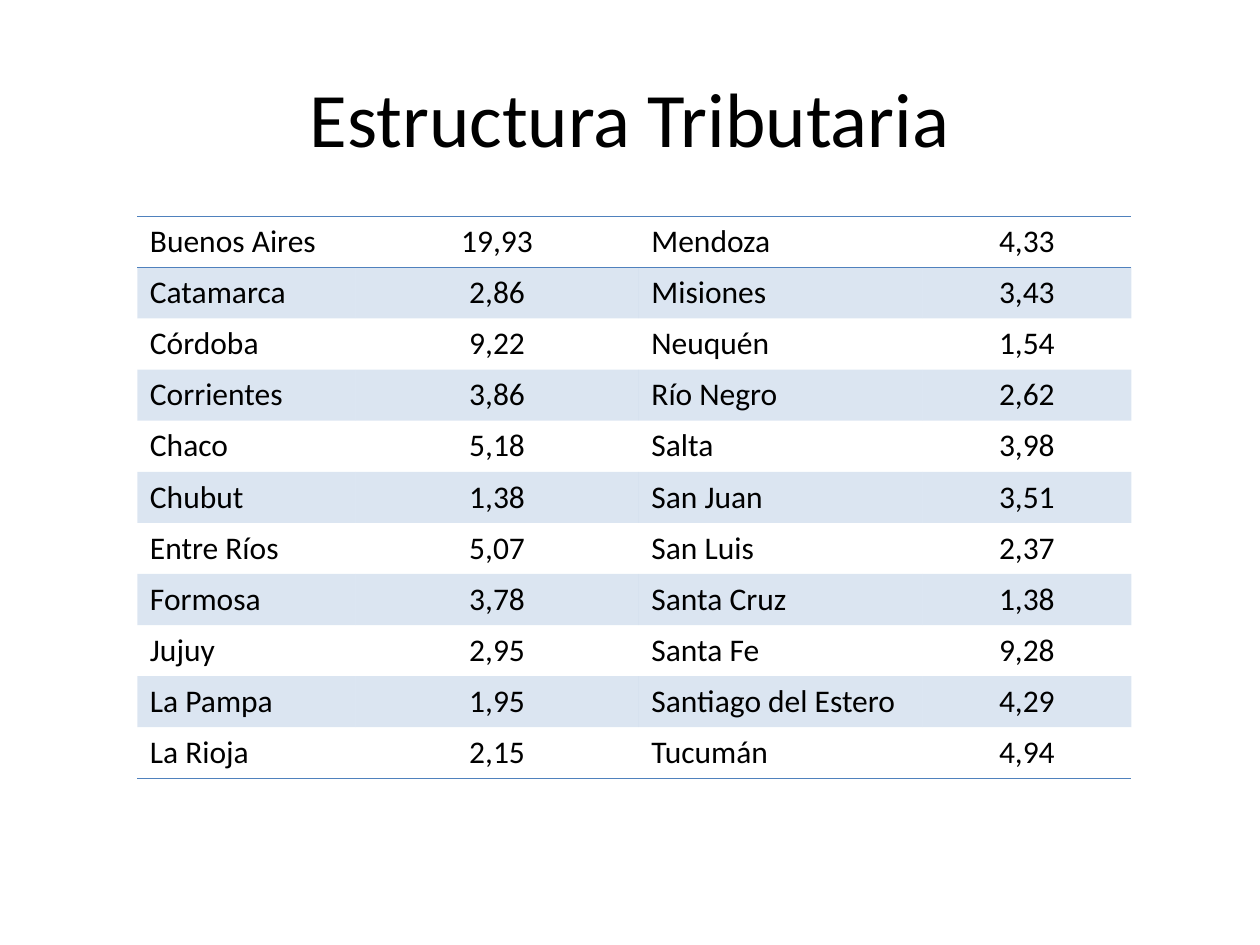
from typing import NamedTuple

from lxml import etree
from pptx import Presentation, util as u
from pptx.dml import color
from pptx.enum import text as t
from pptx.oxml import ns

BLACK = color.RGBColor(0x00, 0x00, 0x00)
BLUE = color.RGBColor(0x4F, 0x81, 0xBD)
FONT = "Calibri"
NO_STYLE = "{2D5ABB26-0587-4C30-8999-92F81FD0307C}"
BAND_OPACITY = 20
COLUMN_WIDTHS = (124.56, 162, 162, 119.52)
ROW_HEIGHT = 29.2
TABLE_LEFT, TABLE_TOP = 78.48, 123.6


class Province(NamedTuple):
    name: str
    share: str


LEFT_PROVINCES = (
    Province("Buenos Aires", "19,93"),
    Province("Catamarca", "2,86"),
    Province("Córdoba", "9,22"),
    Province("Corrientes", "3,86"),
    Province("Chaco", "5,18"),
    Province("Chubut", "1,38"),
    Province("Entre Ríos", "5,07"),
    Province("Formosa", "3,78"),
    Province("Jujuy", "2,95"),
    Province("La Pampa", "1,95"),
    Province("La Rioja", "2,15"),
)
RIGHT_PROVINCES = (
    Province("Mendoza", "4,33"),
    Province("Misiones", "3,43"),
    Province("Neuquén", "1,54"),
    Province("Río Negro", "2,62"),
    Province("Salta", "3,98"),
    Province("San Juan", "3,51"),
    Province("San Luis", "2,37"),
    Province("Santa Cruz", "1,38"),
    Province("Santa Fe", "9,28"),
    Province("Santiago del Estero", "4,29"),
    Province("Tucumán", "4,94"),
)


def write_text(text_frame, content: str, *, size: float,
               align: t.PP_ALIGN = t.PP_ALIGN.LEFT) -> None:
    paragraph = text_frame.paragraphs[0]
    paragraph.alignment = align
    run = paragraph.add_run()
    run.text = content
    run.font.name = FONT
    run.font.size = u.Pt(size)
    run.font.color.rgb = BLACK


def add_border(cell, side: str) -> None:
    properties = cell._tc.get_or_add_tcPr()
    line = etree.SubElement(properties, ns.qn(f"a:{side}"), w=str(u.Pt(1)))
    fill = etree.SubElement(line, ns.qn("a:solidFill"))
    etree.SubElement(fill, ns.qn("a:srgbClr"), val=str(BLUE))


def fill_band(cell) -> None:
    cell.fill.solid()
    cell.fill.fore_color.rgb = BLUE
    band_color = cell._tc.tcPr.find(f".//{ns.qn('a:srgbClr')}")
    etree.SubElement(band_color, ns.qn("a:alpha"), val=str(BAND_OPACITY * 1000))


def add_title(slide, content: str) -> None:
    shape = slide.shapes.add_textbox(u.Pt(36), u.Pt(21.6), u.Pt(648), u.Pt(90))
    shape.text_frame.word_wrap = True
    shape.text_frame.vertical_anchor = t.MSO_ANCHOR.MIDDLE
    write_text(shape.text_frame, content, size=44, align=t.PP_ALIGN.CENTER)


def add_province_table(slide, left: tuple[Province, ...],
                       right: tuple[Province, ...]) -> None:
    row_count = len(left)
    table = slide.shapes.add_table(
        row_count, len(COLUMN_WIDTHS), u.Pt(TABLE_LEFT), u.Pt(TABLE_TOP),
        u.Pt(sum(COLUMN_WIDTHS)), u.Pt(ROW_HEIGHT * row_count)).table
    table.first_row = False
    table.horz_banding = False
    table._tbl.tblPr.find(ns.qn("a:tableStyleId")).text = NO_STYLE
    for column, width in zip(table.columns, COLUMN_WIDTHS):
        column.width = u.Pt(width)
    for row_index, pair in enumerate(zip(left, right)):
        row = table.rows[row_index]
        row.height = u.Pt(ROW_HEIGHT)
        values = [value for province in pair for value in province]
        for column_index, (cell, value) in enumerate(zip(row.cells, values)):
            align = t.PP_ALIGN.CENTER if column_index % 2 else t.PP_ALIGN.LEFT
            write_text(cell.text_frame, value, size=18, align=align)
            if row_index == 0:
                add_border(cell, "lnT")
            if row_index in (0, row_count - 1):
                add_border(cell, "lnB")
            if row_index % 2:
                fill_band(cell)
            else:
                cell.fill.background()


def main() -> None:
    presentation = Presentation()
    presentation.slide_width = u.Pt(720)
    presentation.slide_height = u.Pt(540)
    slide = presentation.slides.add_slide(presentation.slide_layouts[6])
    add_title(slide, "Estructura Tributaria")
    add_province_table(slide, LEFT_PROVINCES, RIGHT_PROVINCES)
    presentation.save("out.pptx")


if __name__ == "__main__":
    main()
